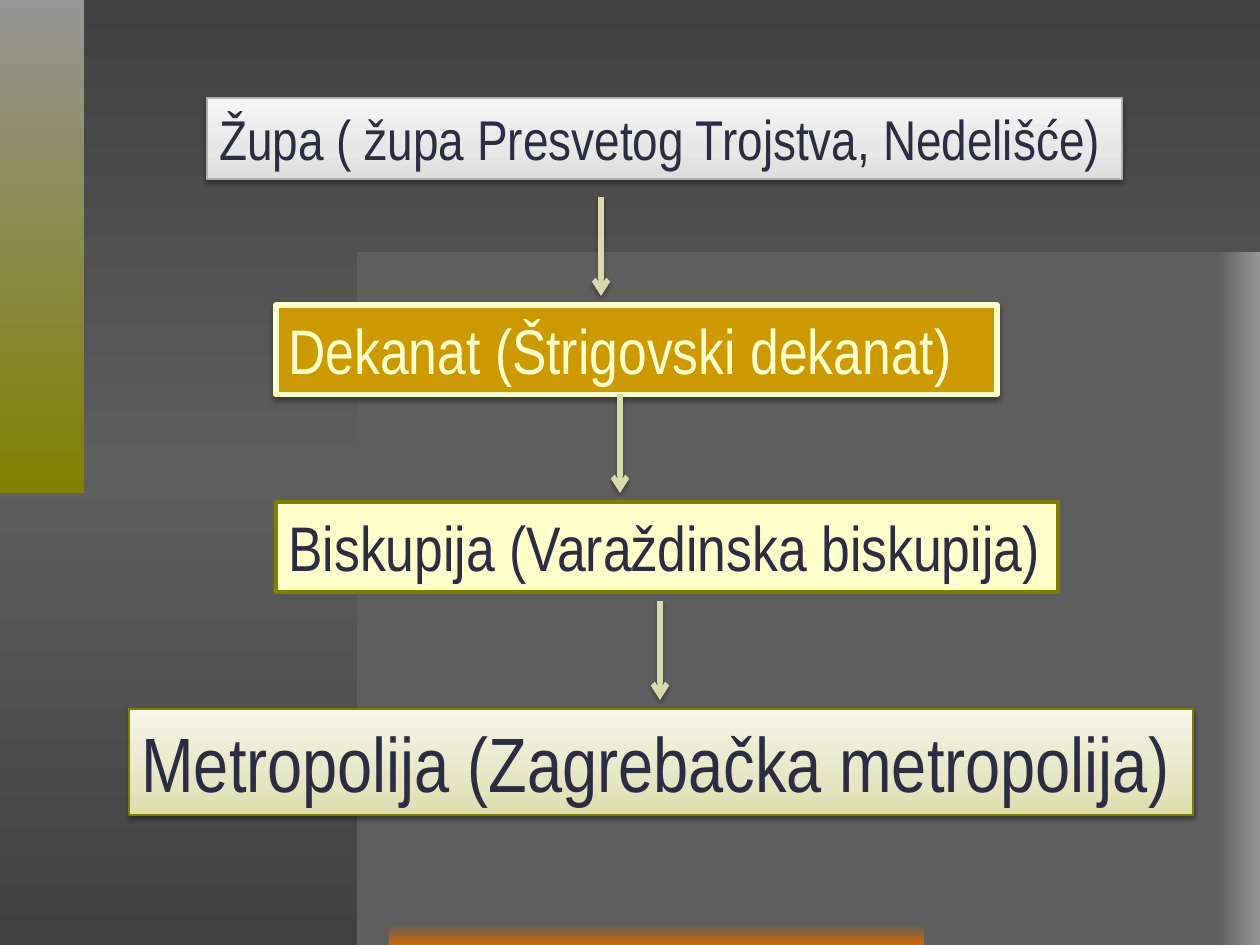
from lxml import etree
from pptx import Presentation
from pptx.dml.color import RGBColor
from pptx.enum.shapes import MSO_CONNECTOR, MSO_SHAPE
from pptx.oxml.ns import qn
from pptx.util import Emu, Pt

RECTANGLE = MSO_SHAPE.RECTANGLE
STRAIGHT = MSO_CONNECTOR.STRAIGHT
EMU_PER_PX = 914400 / 126
RIGHTWARD, DOWNWARD = 0, 270
COLORS = {
    "edge": "404040", "panel": "5F5F5F", "mist": "969696", "olive": "808000",
    "orange": "CC6600", "ink": "2C2C42", "cream": "FFFFCC", "gold": "CC9900",
    "silver": "B2B2B2", "moss": "7D7D00", "arrow": "DADAAE", "black": "000000",
    "gray_light": "F6F6F6", "gray_mid": "E7E7E7", "gray_dark": "DEDEDE",
    "sand_light": "F6F6E9", "sand_mid": "E6E6C6", "sand_dark": "DDDDAD",
}
GRAY_STOPS = [(0, "gray_light"), (65, "gray_mid"), (100, "gray_dark")]
SAND_STOPS = [(0, "sand_light"), (65, "sand_mid"), (100, "sand_dark")]
BACKGROUND_STOPS = [(0, "edge"), (50, "panel"), (100, "edge")]
PANELS = [
    ((1218, 252, 42, 693), [(0, "panel"), (100, "mist")], RIGHTWARD),
    ((357, 252, 861, 693), "panel", None),
    ((0, 0, 84, 493), [(0, "mist"), (100, "olive")], DOWNWARD),
    ((389, 924, 535, 21), [(0, "panel"), (100, "orange")], DOWNWARD),
]
LEVELS = [
    ("Župa ( župa Presvetog Trojstva, Nedelišće)", (207, 98, 915, 81),
     GRAY_STOPS, ("silver", 0.75), (32, "ink"), True),
    ("Dekanat (Štrigovski dekanat)", (276, 305, 721, 90),
     "gold", ("cream", 3), (36, "cream"), True),
    ("Biskupija (Varaždinska biskupija)", (276, 502, 782, 90),
     "cream", ("olive", 2), (36, "ink"), False),
    ("Metropolija (Zagrebačka metropolija)", (129, 709, 1064, 106),
     SAND_STOPS, ("moss", 0.75), (44, "ink"), True),
]
ARROW_LENGTH = 99
ARROW_STARTS = [(601, 197), (620, 394), (660, 601)]


def px(*lengths):
    """Turn pixel lengths into EMU."""
    return [Emu(round(length * EMU_PER_PX)) for length in lengths]


def rgb(name):
    """Look up a palette colour."""
    return RGBColor.from_string(COLORS[name])


def paint(fill, owner, paint_spec, angle=DOWNWARD):
    """Fill with one colour or with gradient stops."""
    if isinstance(paint_spec, str):
        fill.solid()
        fill.fore_color.rgb = rgb(paint_spec)
        return
    fill.gradient()
    fill.gradient_angle = angle
    stop_list = next(owner.iter(qn("a:gsLst")))
    for old_stop in list(stop_list):
        stop_list.remove(old_stop)
    for position, color in paint_spec:
        stop = etree.SubElement(stop_list, qn("a:gs"), pos=str(position * 1000))
        etree.SubElement(stop, qn("a:srgbClr"), val=COLORS[color])


def add_shadow(effects, opacity, distance):
    """Add a soft shadow that falls downward."""
    shadow = etree.SubElement(
        effects, qn("a:outerShdw"), blurRad=str(Pt(3.1)), dist=str(Pt(distance)),
        dir="5400000", rotWithShape="0")
    color = etree.SubElement(shadow, qn("a:srgbClr"), val=COLORS["black"])
    etree.SubElement(color, qn("a:alpha"), val=str(opacity * 1000))


def add_panel(slide, box, paint_spec, angle):
    """Add a decorative rectangle."""
    panel = slide.shapes.add_shape(RECTANGLE, *px(*box))
    panel.shadow.inherit = False
    panel.line.fill.background()
    paint(panel.fill, panel.element, paint_spec, angle)


def add_level(slide, text, box, paint_spec, border, lettering, shadowed):
    """Add a labelled box for one level of the church hierarchy."""
    level = slide.shapes.add_textbox(*px(*box))
    paint(level.fill, level.element, paint_spec)
    border_color, border_width = border
    level.line.color.rgb = rgb(border_color)
    level.line.width = Pt(border_width)
    level.shadow.inherit = False
    if shadowed:
        add_shadow(next(level.element.iter(qn("a:effectLst"))), 38, 1.6)
    level.text_frame.word_wrap = True
    label = level.text_frame.paragraphs[0].add_run()
    label.text = text
    size, color = lettering
    for attribute, value in {"name": "Arial Narrow", "size": Pt(size)}.items():
        setattr(label.font, attribute, value)
    label.font.color.rgb = rgb(color)


def add_arrow(slide, x, y):
    """Add an arrow pointing down to the next level."""
    arrow = slide.shapes.add_connector(STRAIGHT, *px(x, y, x, y + ARROW_LENGTH))
    arrow.line.color.rgb = rgb("arrow")
    arrow.line.width = Pt(3)
    etree.SubElement(arrow.line._get_or_add_ln(), qn("a:tailEnd"), type="arrow")
    effects = etree.SubElement(arrow.element.spPr, qn("a:effectLst"))
    add_shadow(effects, 35, 1.8)


def main():
    """Build the slide and save it."""
    deck = Presentation()
    deck.slide_width, deck.slide_height = px(1260, 945)
    slide = deck.slides.add_slide(deck.slide_layouts[6])
    paint(slide.background.fill, slide.element, BACKGROUND_STOPS)
    for panel in PANELS:
        add_panel(slide, *panel)
    for level in LEVELS:
        add_level(slide, *level)
    for start in ARROW_STARTS:
        add_arrow(slide, *start)
    deck.save("out.pptx")


if __name__ == "__main__":
    main()
